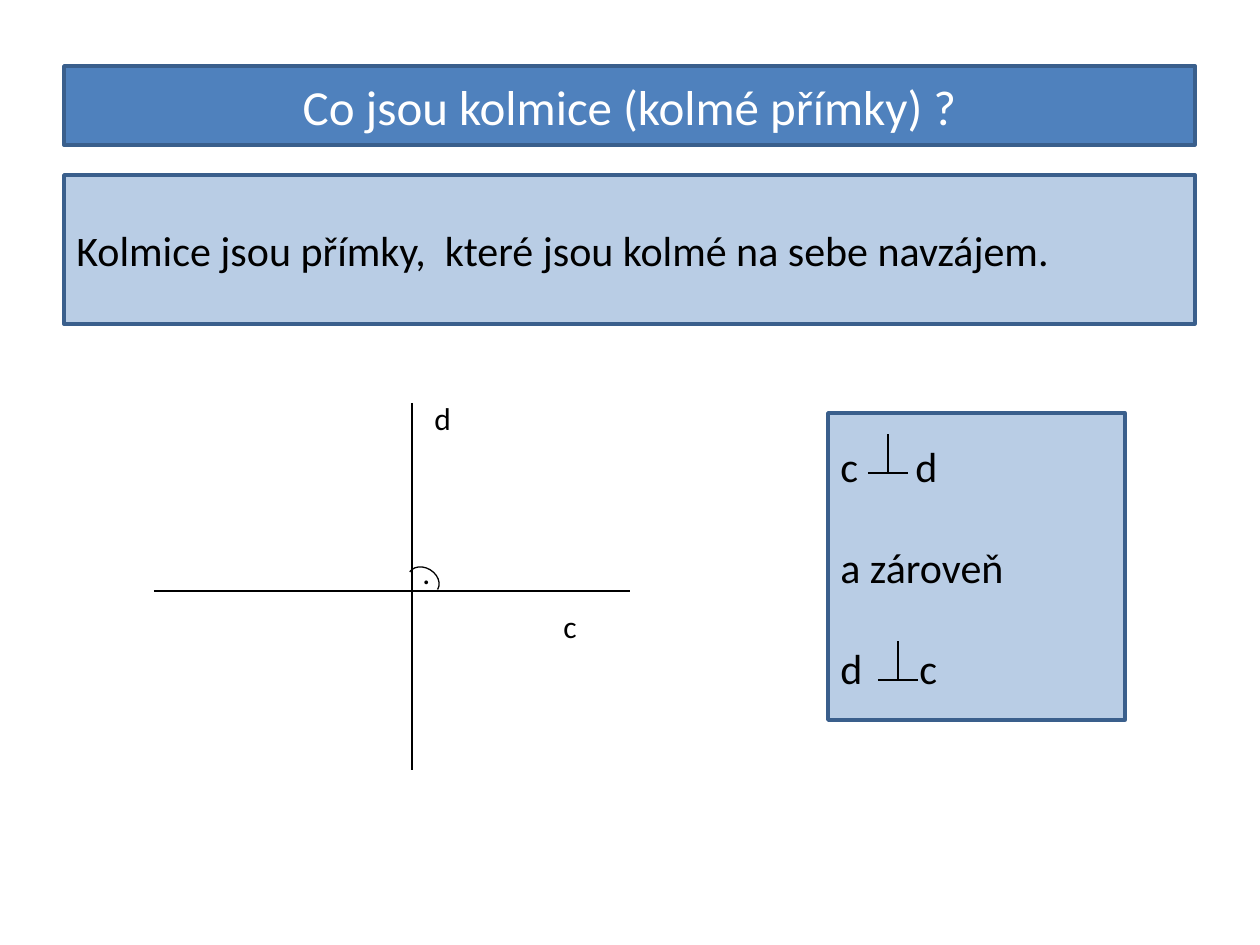
import pptx
import pptx.dml.color
import pptx.enum.shapes
import pptx.enum.text
import pptx.oxml.ns
import pptx.util
from lxml import etree

EMU_PER_PX = 914400 / 126
FONT = "Calibri"
BLUE = pptx.dml.color.RGBColor(0x4F, 0x81, 0xBD)
PALE_BLUE = pptx.dml.color.RGBColor(0xB9, 0xCD, 0xE5)
DARK_BLUE = pptx.dml.color.RGBColor(0x3A, 0x5F, 0x8C)
WHITE = pptx.dml.color.RGBColor(0xFF, 0xFF, 0xFF)
BLACK = pptx.dml.color.RGBColor(0, 0, 0)
SHAPE = pptx.enum.shapes.MSO_SHAPE
ALIGN = pptx.enum.text.PP_ALIGN


def px(*lengths):
    return [pptx.util.Emu(round(length * EMU_PER_PX)) for length in lengths]


def set_line(shape, color, width):
    shape.line.color.rgb = color
    shape.line.width = pptx.util.Pt(width)


def add_run(para, text, size, color=BLACK):
    span = para.add_run()
    span.text = text
    span.font.name = FONT
    span.font.size = pptx.util.Pt(size)
    span.font.color.rgb = color


def add_panel(page, place, fill):
    """Add an outlined rectangle and return its empty first paragraph."""
    panel = page.shapes.add_shape(SHAPE.RECTANGLE, *px(*place))
    panel.shadow.inherit = False
    panel.fill.solid()
    panel.fill.fore_color.rgb = fill
    set_line(panel, DARK_BLUE, 2)
    frame = panel.text_frame
    frame.word_wrap = True
    frame.vertical_anchor = pptx.enum.text.MSO_ANCHOR.MIDDLE
    frame.paragraphs[0].alignment = ALIGN.LEFT
    return frame.paragraphs[0]


def add_label(page, place, text):
    frame = page.shapes.add_textbox(*px(*place)).text_frame
    frame.word_wrap = True
    frame.auto_size = pptx.enum.text.MSO_AUTO_SIZE.SHAPE_TO_FIT_TEXT
    add_run(frame.paragraphs[0], text, 18)


def add_line(page, *ends):
    line = page.shapes.add_connector(
        pptx.enum.shapes.MSO_CONNECTOR.STRAIGHT, *px(*ends))
    set_line(line, BLACK, 0.75)
    etree.SubElement(line._element.spPr, pptx.oxml.ns.qn("a:effectLst"))


def add_perpendicular_sign(page, x, y):
    """Draw the sign with the foot of its upright at (x, y)."""
    add_line(page, x - 20, y, x + 20, y)
    add_line(page, x, y, x, y - 39)


def add_tab_stop(para, position):
    tabs = etree.SubElement(para._p.get_or_add_pPr(), pptx.oxml.ns.qn("a:tabLst"))
    etree.SubElement(tabs, pptx.oxml.ns.qn("a:tab"),
                     pos=str(px(position)[0]), algn="l")


def add_right_angle(page):
    arc = page.shapes.add_shape(SHAPE.ARC, *px(407, 568, 33, 26))
    arc.shadow.inherit = False
    arc.rotation = 31.5
    arc.adjustments[0] = 109.06
    arc.adjustments[1] = 0
    arc.fill.background()
    set_line(arc, BLACK, 0.75)


def add_drawing(page):
    add_line(page, 154, 591, 630, 591)
    add_label(page, (551, 601, 100, 50), "c")
    add_line(page, 412, 403, 412, 770)
    add_label(page, (422, 393, 89, 50), "d")
    add_label(page, (410, 547, 30, 50), ".")
    add_right_angle(page)


def add_notation(page):
    first = add_panel(page, (828, 413, 297, 307), PALE_BLUE)
    add_tab_stop(first, 75)
    add_run(first, "c\td", 24)
    for text in ("a zároveň", "d\tc"):
        para = first._parent.add_paragraph()
        para.alignment = ALIGN.LEFT
        para.space_before = pptx.util.Pt(29)
        add_tab_stop(para, 79)
        add_run(para, text, 24)
    add_perpendicular_sign(page, 888, 473)
    add_perpendicular_sign(page, 898, 680)


def main():
    deck = pptx.Presentation()
    deck.slide_width, deck.slide_height = px(1260, 945)
    page = deck.slides.add_slide(deck.slide_layouts[6])

    title = add_panel(page, (64, 66, 1131, 79), BLUE)
    title.alignment = ALIGN.CENTER
    add_run(title, "Co jsou kolmice (kolmé přímky) ?", 28, WHITE)
    definition = add_panel(page, (64, 175, 1131, 149), PALE_BLUE)
    add_run(definition, "Kolmice jsou přímky,  které jsou kolmé na sebe navzájem.", 24)
    add_drawing(page)
    add_notation(page)
    deck.save("out.pptx")


if __name__ == "__main__":
    main()
